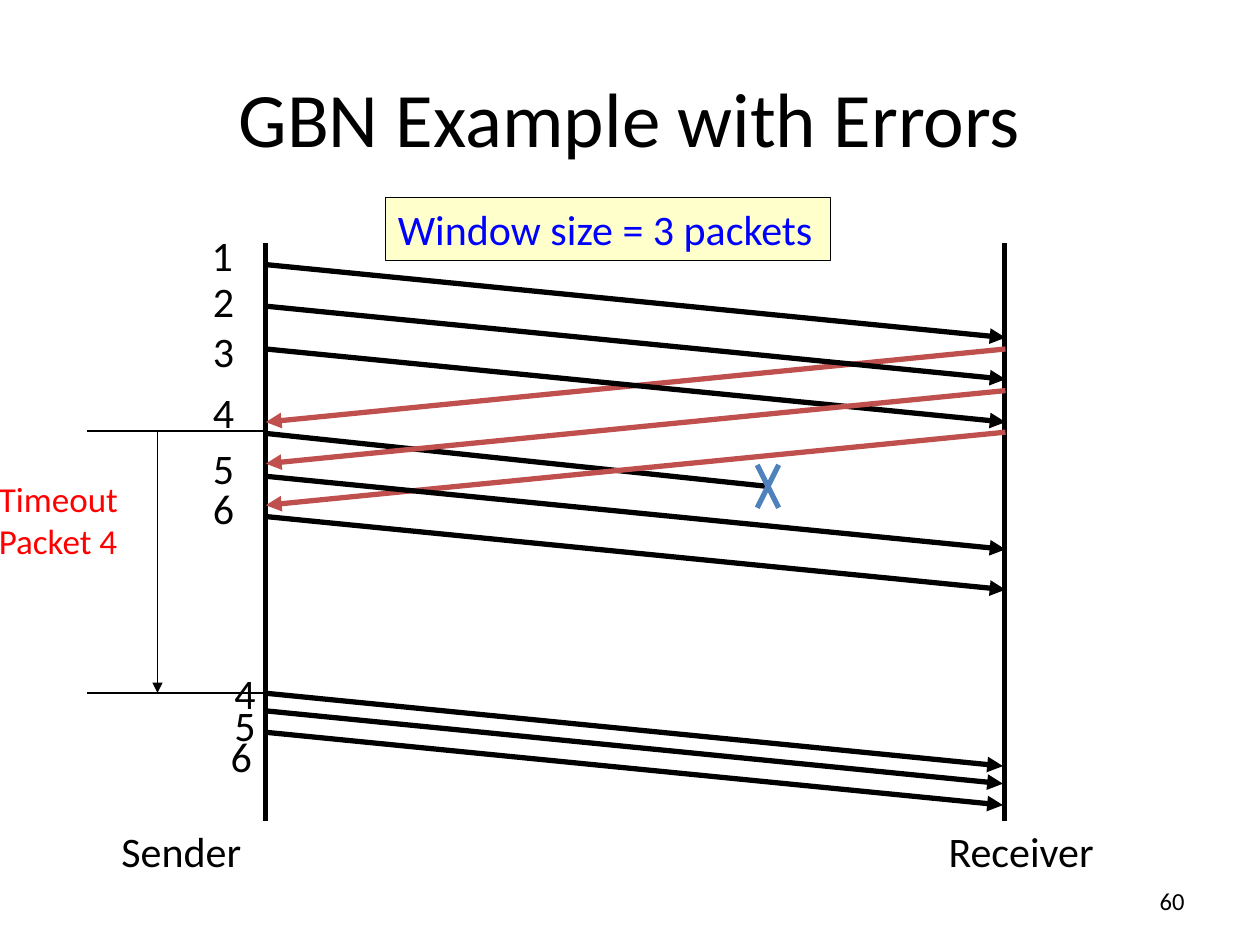
from lxml.etree import SubElement
from pptx import Presentation
from pptx.dml.color import RGBColor
from pptx.enum.shapes import MSO_CONNECTOR as Conn, MSO_SHAPE as Shape
from pptx.enum.text import (MSO_ANCHOR as Anchor, MSO_AUTO_SIZE as Fit,
                            PP_ALIGN as Align)
from pptx.oxml.ns import qn
from pptx.util import Inches, Pt

HEX = {"black": "000000", "ack": "C0504D", "loss": "4F81BD", "late": "FF0000",
       "note": "0000FF", "cream": "FFFFCC"}
SEND, RECV = 2.11, 7.98    # x of the two time lines
TOP, END = 1.93, 6.52      # y of the time lines
DROP = 0.58                # fall of a packet in transit
START, STOP = 3.42, 5.5    # timeout of packet 4
WIDE, SLIM = (0.1, 0.05), (0.09, 0.04)    # text insets: side, top

# kind, start y, in drawing order
FLOWS = [("data", 2.1), ("ack", 2.77), ("lost", 3.44), ("data", 2.43),
         ("data", 2.77), ("ack", 3.1), ("ack", 3.43),
         ("data", 3.78), ("data", 4.1)]
RESENT = [5.5, 5.64, 5.81]
LABELS = [("1", 1.59, 1.78), ("2", 1.6, 2.15), ("3", 1.6, 2.54),
          ("4", 1.6, 3.03), ("5", 1.6, 3.47), ("6", 1.6, 3.79),
          ("4", 1.77, 5.26), ("5", 1.77, 5.51), ("6", 1.74, 5.76)]
# text, box, size, colour, insets, alignment, anchor, wrap
TEXTS = [
    ("GBN Example with Errors", (0.5, 0.3, 9, 1.25), 44, "black",
     WIDE, Align.CENTER, Anchor.MIDDLE, True),
    ("Sender", (0.86, 6.5, 1.16, 0.5), 24, "black",
     WIDE, Align.CENTER, Anchor.MIDDLE),
    ("Receiver", (7.42, 6.5, 1.37, 0.5), 24, "black",
     WIDE, Align.CENTER, Anchor.MIDDLE),
    ("Timeout\nPacket 4", (-0.1, 3.75, 1.18, 0.76), 20, "late", SLIM),
    ("60", (7.17, 6.95, 2.33, 0.4), 14, "black",
     WIDE, Align.RIGHT, Anchor.MIDDLE, True),
]

prs = Presentation()
prs.slide_width, prs.slide_height = Inches(10), Inches(7.5)
slide = prs.slides.add_slide(prs.slide_layouts[6])


def color(name):
    return RGBColor.from_string(HEX[name])


def write(shape, text, size, name, inset=WIDE, align=Align.LEFT,
          anchor=Anchor.TOP, wrap=False):
    frame = shape.text_frame
    frame.text = text
    frame.word_wrap = wrap
    frame.auto_size = Fit.NONE if wrap else Fit.SHAPE_TO_FIT_TEXT
    frame.vertical_anchor = anchor
    frame.margin_left = frame.margin_right = Inches(inset[0])
    frame.margin_top = frame.margin_bottom = Inches(inset[1])
    for para in frame.paragraphs:
        para.alignment = align
        para.font.name = "Calibri"
        para.font.size = Pt(size)
        para.font.color.rgb = color(name)


def text_box(text, box, *style):
    write(slide.shapes.add_textbox(*map(Inches, box)), text, *style)


def line(x1, y1, x2, y2, name="black", width=3, arrow=False):
    link = slide.shapes.add_connector(
        Conn.STRAIGHT, *map(Inches, (x1, y1, x2, y2)))
    link.line.color.rgb = color(name)
    link.line.width = Pt(width)
    props = link._element.spPr
    if arrow:
        SubElement(props.find(qn("a:ln")), qn("a:tailEnd"), type="triangle")
    SubElement(props, qn("a:effectLst"))


note = slide.shapes.add_shape(
    Shape.RECTANGLE, *map(Inches, (3.06, 1.57, 3.53, 0.5)))
note.shadow.inherit = False
note.fill.solid()
note.fill.fore_color.rgb = color("cream")
note.line.color.rgb = color("black")
note.line.width = Pt(0.75)
write(note, "Window size = 3 packets", 24, "note")

for x in (SEND, 7.97):
    line(x, TOP, x, END)

for kind, y in FLOWS:
    if kind == "data":
        line(SEND, y, RECV, y + DROP, arrow=True)
    elif kind == "ack":
        line(RECV, y, SEND, y + DROP, "ack", arrow=True)
    else:
        line(SEND, y, 6.09, 3.86)

for left, right in ((6.01, 6.18), (6.18, 6.01)):
    line(left, 3.69, right, 4.03, "loss")

for y in (START, STOP):
    line(2.13, y, 0.69, y, width=0.75)
line(1.25, START, 1.25, STOP, width=0.75, arrow=True)

for y in RESENT:
    line(2.09, y, 7.96, y + DROP, arrow=True)

for digit, x, y in LABELS:
    text_box(digit, (x, y, 0.35, 0.49), 24, "black", SLIM)
for item in TEXTS:
    text_box(*item)

prs.save("out.pptx")
